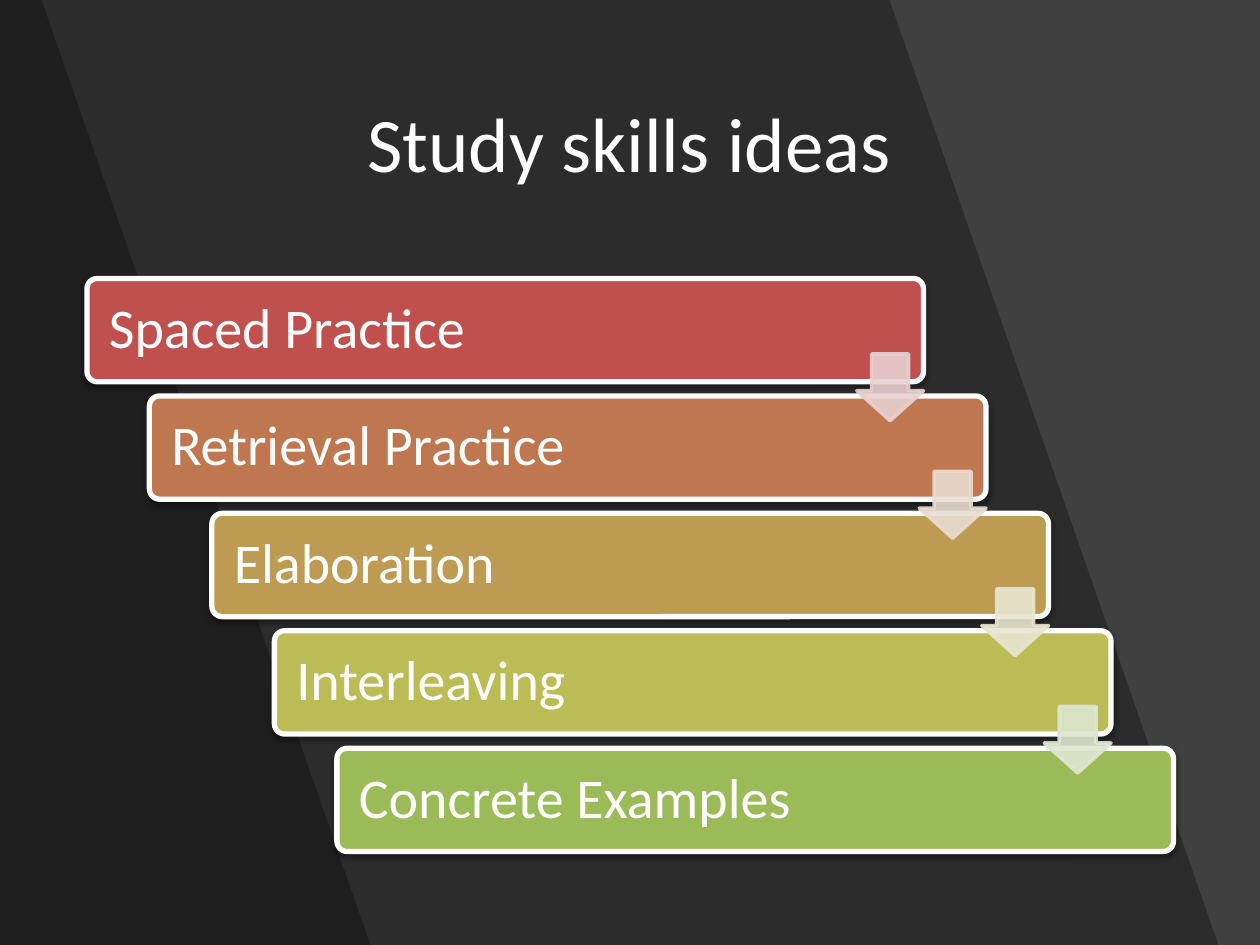
from lxml.etree import SubElement
from pptx import Presentation
from pptx.dml.color import RGBColor as RGB
from pptx.enum.shapes import MSO_SHAPE as SHAPE
from pptx.enum.text import MSO_ANCHOR as ANCHOR, PP_ALIGN as ALIGN
from pptx.oxml.ns import qn
from pptx.util import Inches, Pt

COLORS = {"bg": "404040", "band": "000000", "text": "FFFFFF", "shadow": "000000"}
STEPS = [
    ("Spaced Practice", "C0504D", "E8D0D0"),
    ("Retrieval Practice", "BF7750", "E8DCD0"),
    ("Elaboration", "BD9B53", "E7E6D1"),
    ("Interleaving", "BCBC56", "DEE7D1"),
    ("Concrete Examples", "9BBB59", None),
]
LEFT, TOP = 0.69, 2.21
STEP_X, STEP_Y = 0.496, 0.932
BAR_W, BAR_H, ARROW = 6.64, 0.82, 0.53
SLANT = 2.61


def set_alpha(fill, percent):
    """Make a solid fill partly transparent."""
    color = fill._xPr.find(qn("a:solidFill"))[0]
    SubElement(color, qn("a:alpha"), val=str(percent * 1000))


def paint(sp, fill, line=None, width=0, alpha=None):
    """Give a shape its fill and outline and no theme shadow."""
    sp.shadow.inherit = False
    sp.fill.solid()
    sp.fill.fore_color.rgb = RGB.from_string(fill)
    fills = [sp.fill]
    if line:
        sp.line.width = Pt(width)
        sp.line.color.rgb = RGB.from_string(line)
        fills.append(sp.line.fill)
    else:
        sp.line.fill.background()
    if alpha:
        for f in fills:
            set_alpha(f, alpha)


def add_shadow(sp):
    """Drop a soft shadow straight down."""
    effects = sp._element.spPr.find(qn("a:effectLst"))
    shadow = SubElement(effects, qn("a:outerShdw"), blurRad=str(Pt(3.1)),
                        dist=str(Pt(1.6)), dir="5400000", rotWithShape="0")
    color = SubElement(shadow, qn("a:srgbClr"), val=COLORS["shadow"])
    SubElement(color, qn("a:alpha"), val="38000")


def write(sp, text, size, align):
    """Put one formatted, vertically centred line into a shape."""
    tf = sp.text_frame
    tf.text = text
    tf.word_wrap = True
    tf.vertical_anchor = ANCHOR.MIDDLE
    p = tf.paragraphs[0]
    p.alignment = align
    font = p.runs[0].font
    font.name, font.size = "Calibri", Pt(size)
    font.color.rgb = RGB.from_string(COLORS["text"])
    return p


def add_band(slide, top_x, height):
    """Darken the slide left of a slanted edge."""
    corners = [(top_x, 0), (top_x + SLANT, height), (0, height)]
    builder = slide.shapes.build_freeform(0, 0)
    builder.add_line_segments([(Inches(x), Inches(y)) for x, y in corners])
    paint(builder.convert_to_shape(), COLORS["band"], alpha=30)


def add_title(slide, text):
    """Fill the title placeholder and lift it above the bands."""
    title = slide.shapes.title
    title.left, title.top = Inches(0.68), Inches(0.4)
    title.width, title.height = Inches(8.63), Inches(1.45)
    write(title, text, 44, ALIGN.CENTER)
    slide.shapes._spTree.append(title._element)


def add_bar(slide, i, text, fill):
    """Add the bar of one step."""
    sp = slide.shapes.add_shape(
        SHAPE.ROUNDED_RECTANGLE, Inches(LEFT + i * STEP_X),
        Inches(TOP + i * STEP_Y), Inches(BAR_W), Inches(BAR_H))
    sp.adjustments[0] = 0.1
    paint(sp, fill, COLORS["text"], 3)
    add_shadow(sp)
    p = write(sp, text, 32, ALIGN.LEFT)
    p.line_spacing = 0.9
    sp.text_frame.margin_left = Inches(0.15)


def add_arrow(slide, i, color):
    """Add the arrow from one step to the next, flush with the bar's right end."""
    sp = slide.shapes.add_shape(
        SHAPE.DOWN_ARROW, Inches(LEFT + i * STEP_X + BAR_W - ARROW),
        Inches(TOP + 0.6 + i * STEP_Y), Inches(ARROW), Inches(ARROW))
    sp.adjustments[0], sp.adjustments[1] = 0.55, 0.45
    paint(sp, color, color, 2, alpha=90)


def main():
    """Build and save the slide."""
    prs = Presentation()
    prs.slide_width, prs.slide_height = Inches(10), Inches(7.5)
    slide = prs.slides.add_slide(prs.slide_layouts[5])
    slide.background.fill.solid()
    slide.background.fill.fore_color.rgb = RGB.from_string(COLORS["bg"])
    for top_x in (7.06, 0.33):
        add_band(slide, top_x, 7.5)
    add_title(slide, "Study skills ideas")
    for i, (text, fill, _) in enumerate(STEPS):
        add_bar(slide, i, text, fill)
    for i, (_, _, color) in enumerate(STEPS[:-1]):
        add_arrow(slide, i, color)
    prs.save("out.pptx")


if __name__ == "__main__":
    main()
